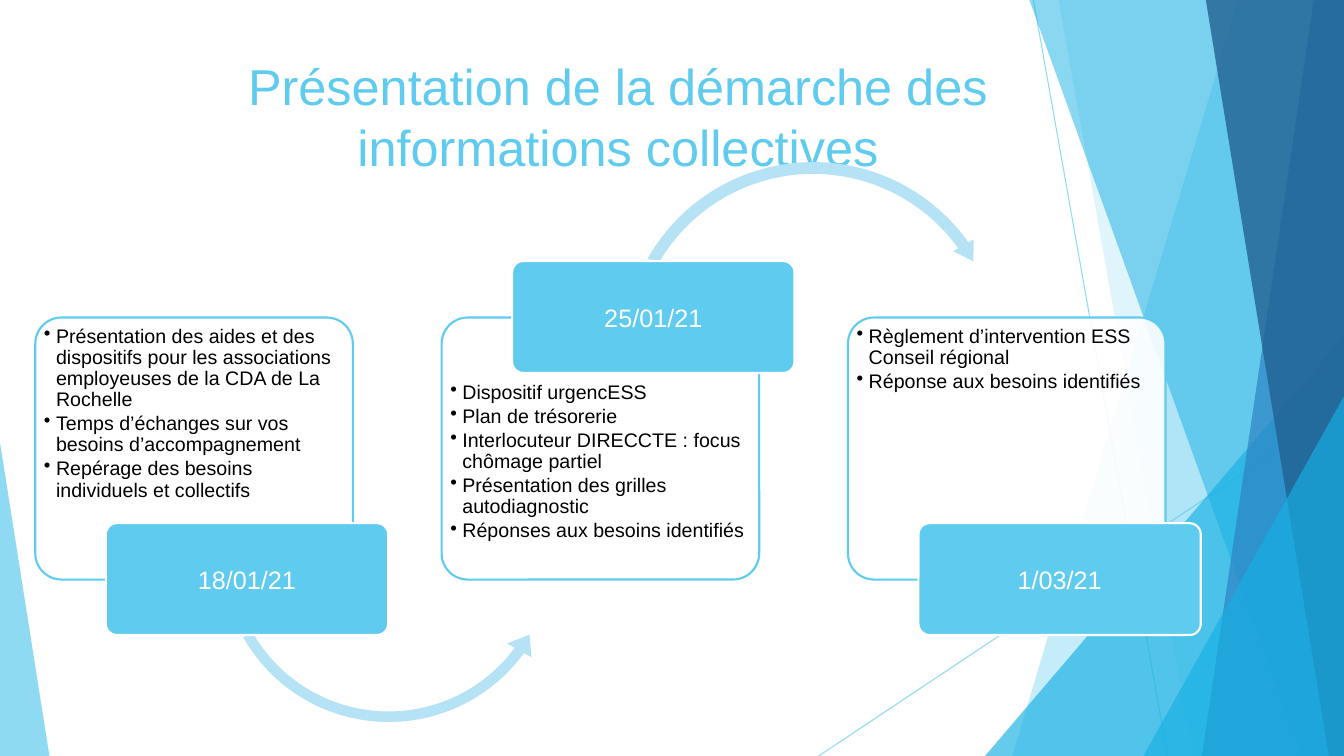
"""Build the slide that presents the three collective information sessions."""
from dataclasses import dataclass
from typing import Optional

from lxml import etree
from pptx import Presentation
from pptx import util as u
from pptx.dml.color import RGBColor
from pptx.enum import shapes, text
from pptx.oxml import ns

PX = 9144
WIDTH, HEIGHT = 1333, 750
FONT = "Arial"
COLORS = {
    "sky": "5FCBEF",
    "cyan": "17B0E4",
    "blue": "2E83C3",
    "navy": "226292",
    "arrow": "B6E2F6",
    "white": "FFFFFF",
    "black": "000000",
}
CARD_LEFT, CARD_STEP, CARD_TOP = 35, 403, 315
CARD_WIDTH, CARD_HEIGHT = 315, 260
TILE_OFFSET, TILE_WIDTH, TILE_HEIGHT = 70, 280, 111


@dataclass(frozen=True)
class Ray:
    start: tuple[int, int]
    end: tuple[int, int]


@dataclass(frozen=True)
class Band:
    top_x: int
    bottom_x: int
    color: str
    opacity: int


@dataclass(frozen=True)
class Wedge:
    left: int
    top: int
    width: int
    apex: int
    color: str
    opacity: int


@dataclass(frozen=True)
class Arrow:
    kind: shapes.MSO_SHAPE
    left: int
    top: int
    size: int
    adjustments: tuple[float, ...]


@dataclass(frozen=True)
class Session:
    date: str
    topics: tuple[str, ...]
    tile_top: int
    text_top: int
    arrow: Optional[Arrow] = None


RAYS = (Ray((1025, 0), (1158, HEIGHT)), Ray((WIDTH, 403), (812, HEIGHT)))
DECORATIONS = (
    Band(1228, 1004, "sky", 36),
    Band(1050, 1183, "sky", 20),
    Wedge(977, 333, 356, 1, "cyan", 66),
    Band(1021, 1291, "cyan", 50),
    Band(1303, 1192, "blue", 70),
    Band(1196, 1318, "navy", 80),
    Wedge(1134, 393, 199, 1, "cyan", 66),
    Wedge(0, 439, 49, 0, "sky", 70),
)
SESSIONS = (
    Session(
        "18/01/21",
        ("Présentation des aides et des dispositifs pour les associations "
         "employeuses de la CDA de La Rochelle",
         "Temps d’échanges sur vos besoins d’accompagnement",
         "Repérage des besoins individuels et collectifs"),
        519, 1,
        Arrow(shapes.MSO_SHAPE.LEFT_CIRCULAR_ARROW, 211, 376, 349,
              (0.03, 3.95, 21.7, 90.25, 0.04)),
    ),
    Session(
        "25/01/21",
        ("Dispositif urgencESS",
         "Plan de trésorerie",
         "Interlocuteur DIRECCTE : focus chômage partiel",
         "Présentation des grilles autodiagnostic",
         "Réponses aux besoins identifiés"),
        259, 57,
        Arrow(shapes.MSO_SHAPE.CIRCULAR_ARROW, 612, 155, 389,
              (0.03, 3.51, 194.73, 125.76, 0.03)),
    ),
    Session(
        "1/03/21",
        ("Règlement d’intervention ESS Conseil régional",
         "Réponse aux besoins identifiés"),
        519, 1,
    ),
)


def px(value: int) -> u.Emu:
    return u.Emu(value * PX)


def rgb(color: str) -> RGBColor:
    return RGBColor.from_string(COLORS[color])


def set_opacity(properties, percent: int) -> None:
    color = properties.find(ns.qn("a:solidFill")).find(ns.qn("a:srgbClr"))
    etree.SubElement(color, ns.qn("a:alpha"), val=str(percent * 1000))


def paint(shape, fill: str, opacity: int = 100, line: Optional[str] = None) -> None:
    shape.shadow.inherit = False
    shape.fill.solid()
    shape.fill.fore_color.rgb = rgb(fill)
    if opacity < 100:
        set_opacity(shape.element.spPr, opacity)
    if line:
        shape.line.color.rgb = rgb(line)
        shape.line.width = u.Pt(1.5)
    else:
        shape.line.fill.background()


def add_preset(slide, kind, left: int, top: int, width: int, height: int):
    return slide.shapes.add_shape(kind, px(left), px(top), px(width), px(height))


def add_ray(slide, ray: Ray) -> None:
    connector = slide.shapes.add_connector(
        shapes.MSO_CONNECTOR.STRAIGHT, *map(px, ray.start + ray.end))
    connector.line.color.rgb = rgb("sky")
    connector.line.width = u.Pt(0.75)
    properties = connector.element.spPr
    set_opacity(properties.find(ns.qn("a:ln")), 70)
    etree.SubElement(properties, ns.qn("a:effectLst"))


def add_decoration(slide, item: Band | Wedge) -> None:
    if isinstance(item, Band):
        builder = slide.shapes.build_freeform(item.top_x, 0, scale=PX)
        builder.add_line_segments(
            [(WIDTH, 0), (WIDTH, HEIGHT), (item.bottom_x, HEIGHT)], close=True)
        shape = builder.convert_to_shape()
    else:
        shape = add_preset(slide, shapes.MSO_SHAPE.ISOSCELES_TRIANGLE,
                           item.left, item.top, item.width, HEIGHT - item.top)
        shape.adjustments[0] = item.apex
    paint(shape, item.color, item.opacity)


def write(shape, lines: tuple[str, ...], size: int, color: str,
          anchor=text.MSO_ANCHOR.MIDDLE, align=text.PP_ALIGN.CENTER) -> None:
    frame = shape.text_frame
    frame.word_wrap = True
    frame.vertical_anchor = anchor
    for index, line in enumerate(lines):
        paragraph = frame.add_paragraph() if index else frame.paragraphs[0]
        paragraph.alignment = align
        run = paragraph.add_run()
        run.text = line
        run.font.size = u.Pt(size)
        run.font.name = FONT
        run.font.color.rgb = rgb(color)


def add_title(slide, title: str) -> None:
    box = slide.shapes.add_textbox(px(143), px(43), px(940), px(144))
    write(box, (title,), 36, "sky")


def add_card(slide, left: int, session: Session) -> None:
    card = add_preset(slide, shapes.MSO_SHAPE.ROUNDED_RECTANGLE,
                      left, CARD_TOP, CARD_WIDTH, CARD_HEIGHT)
    card.adjustments[0] = 0.1
    paint(card, "white", 90, "sky")
    write(card, session.topics, 14, "black",
          text.MSO_ANCHOR.TOP, text.PP_ALIGN.LEFT)
    frame = card.text_frame
    frame.margin_left = frame.margin_right = frame.margin_bottom = px(1)
    frame.margin_top = px(session.text_top)
    for paragraph in frame.paragraphs:
        paragraph.line_spacing = 0.9
        paragraph.space_after = u.Pt(2)
        properties = paragraph._p.get_or_add_pPr()
        properties.set("marL", str(px(12)))
        properties.set("indent", str(-px(12)))
        etree.SubElement(properties, ns.qn("a:buChar"), char="•")


def add_session(slide, left: int, session: Session) -> None:
    add_card(slide, left, session)
    arrow = session.arrow
    if arrow:
        curve = add_preset(slide, arrow.kind, arrow.left, arrow.top,
                           arrow.size, arrow.size)
        for index, value in enumerate(arrow.adjustments):
            curve.adjustments[index] = value
        paint(curve, "arrow")
    tile = add_preset(slide, shapes.MSO_SHAPE.ROUNDED_RECTANGLE,
                      left + TILE_OFFSET, session.tile_top, TILE_WIDTH, TILE_HEIGHT)
    tile.adjustments[0] = 0.1
    paint(tile, "sky", line="white")
    write(tile, (session.date,), 18, "white")


def main() -> None:
    presentation = Presentation()
    presentation.slide_width, presentation.slide_height = px(WIDTH), px(HEIGHT)
    slide = presentation.slides.add_slide(presentation.slide_layouts[6])
    for ray in RAYS:
        add_ray(slide, ray)
    for item in DECORATIONS:
        add_decoration(slide, item)
    add_title(slide, "Présentation de la démarche des informations collectives")
    for index, session in enumerate(SESSIONS):
        add_session(slide, CARD_LEFT + index * CARD_STEP, session)
    presentation.save("out.pptx")


if __name__ == "__main__":
    main()
